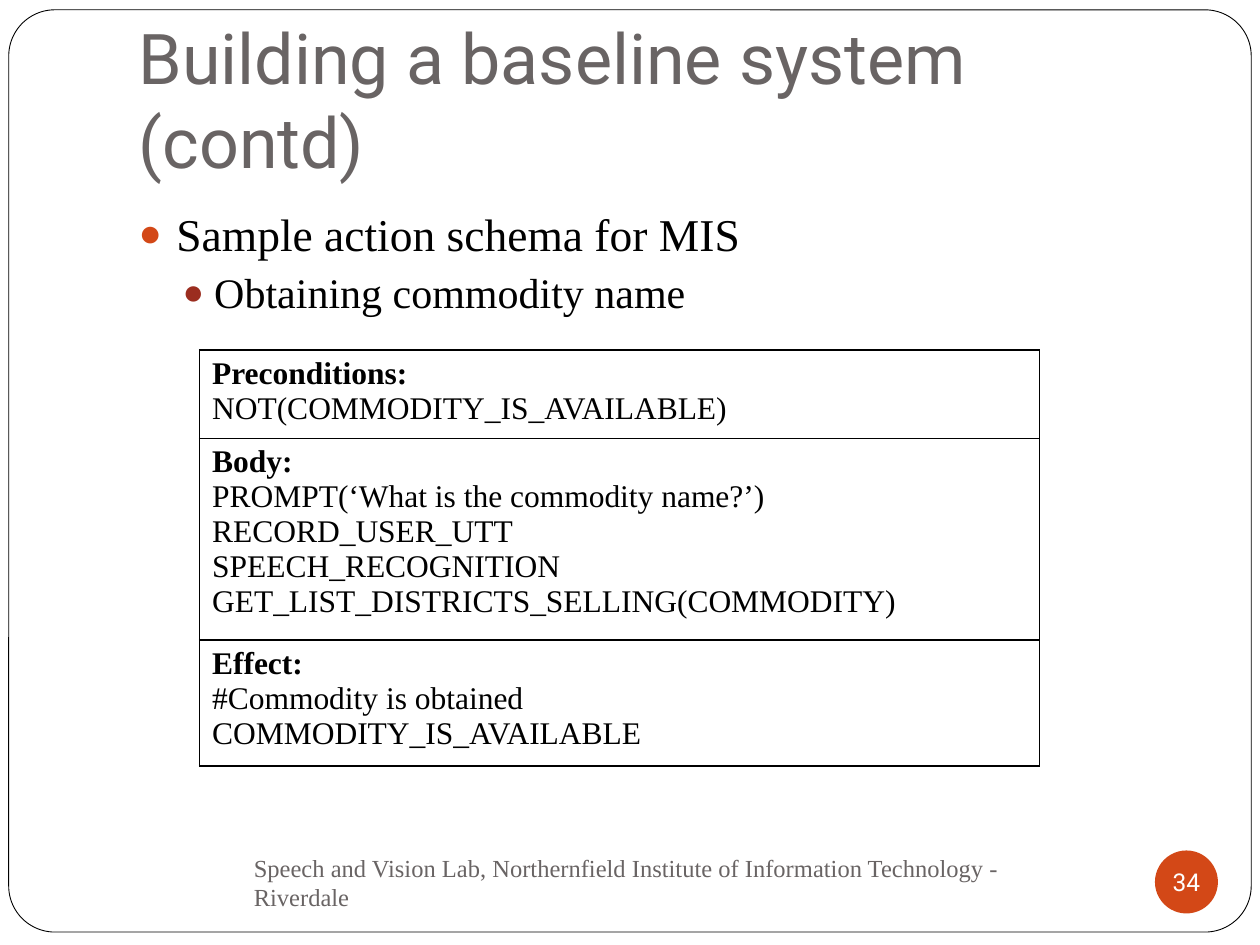
from dataclasses import dataclass

from lxml import etree
from pptx import Presentation
from pptx.dml.color import RGBColor
from pptx.enum import shapes as es, text as et
from pptx.oxml import ns
from pptx.util import Pt

SERIF, SANS = "Times New Roman", "Roboto"
BLACK, WHITE, GREY, RUST, BRICK = "000000", "FFFFFF", "696464", "D34817", "9B2D1F"


@dataclass
class Box:
    x: float
    y: float
    w: float
    h: float

    def lengths(self) -> tuple:
        return Pt(self.x), Pt(self.y), Pt(self.w), Pt(self.h)


@dataclass
class Point:
    words: str
    level: int
    size: float
    left: float
    hang: float
    before: float
    dot: str


@dataclass
class Part:
    head: str
    lines: list
    height: float


POINTS = [
    Point("Sample action schema for MIS", 0, 26, 21.6, 21.6, 5.8, RUST),
    Point("Obtaining commodity name", 1, 24, 43.2, 18, 3.7, BRICK),
]
PARTS = [
    Part("Preconditions:", ["NOT(COMMODITY_IS_AVAILABLE)"], 47.3),
    Part("Body:", ["PROMPT(‘What is the commodity name?’)", "RECORD_USER_UTT",
                   "SPEECH_RECOGNITION", "GET_LIST_DISTRICTS_SELLING(COMMODITY)"], 107),
    Part("Effect:", ["#Commodity is obtained", "COMMODITY_IS_AVAILABLE"], 67.3),
]


def paint(target, color: str) -> None:
    """Give a fill one solid colour."""
    target.solid()
    target.fore_color.rgb = RGBColor.from_string(color)


def assign(target, values: dict) -> None:
    for name, value in values.items():
        setattr(target, name, value)


def write(para, words: str, size: float, font: str, color: str, bold: bool = False) -> None:
    run = para.add_run()
    run.text = words
    assign(run.font, {"size": Pt(size), "name": font, "bold": bold})
    paint(run.font.fill, color)


def place(shape, box: Box) -> None:
    assign(shape, dict(zip(("left", "top", "width", "height"), box.lengths())))


def node(parent, tag: str, **attrs):
    return etree.SubElement(parent, ns.qn(tag), attrs)


def bullet(para, point: Point) -> None:
    props = para._p.get_or_add_pPr()
    props.set("marL", str(Pt(point.left)))
    props.set("indent", str(-Pt(point.hang)))
    node(node(props, "a:buClr"), "a:srgbClr", val=point.dot)
    node(props, "a:buSzPct", val="85000")
    node(props, "a:buChar", char="●")


def border(cell, color: str, width: float) -> None:
    props = cell._tc.get_or_add_tcPr()
    for side in "LRTB":
        line = node(props, f"a:ln{side}", w=str(Pt(width)))
        node(node(line, "a:solidFill"), "a:srgbClr", val=color)


def shape(slide, kind, box: Box, fill: str):
    item = slide.shapes.add_shape(kind, *box.lengths())
    item.shadow.inherit = False
    paint(item.fill, fill)
    return item


def main() -> None:
    deck = Presentation()
    assign(deck, {"slide_width": Pt(720), "slide_height": Pt(540)})
    slide = deck.slides.add_slide(deck.slide_layouts[1])

    # Rounded frame behind everything
    frame = shape(slide, es.MSO_SHAPE.ROUNDED_RECTANGLE, Box(5, 5.6, 710, 527), WHITE)
    frame.adjustments[0] = 0.05
    paint(frame.line.fill, BLACK)
    frame.line.width = Pt(0.5)
    frame.element.getparent().insert(2, frame.element)

    # Title
    title = slide.shapes.title
    place(title, Box(72, 21.6, 612, 90))
    assign(title.text_frame, {
        "vertical_anchor": et.MSO_ANCHOR.BOTTOM, "margin_bottom": Pt(7.2),
        "auto_size": et.MSO_AUTO_SIZE.NONE, "word_wrap": True})
    para = title.text_frame.paragraphs[0]
    para.alignment = et.PP_ALIGN.LEFT
    write(para, "Building a baseline system (contd)", 40, SANS, GREY)

    # Footer
    foot = slide.shapes.add_textbox(*Box(138, 486, 462, 36).lengths())
    assign(foot.text_frame, {"word_wrap": True, "vertical_anchor": et.MSO_ANCHOR.MIDDLE})
    write(foot.text_frame.paragraphs[0],
          "Speech and Vision Lab, Northernfield Institute of Information Technology - Riverdale",
          14, SERIF, GREY)

    # Page number
    badge = shape(slide, es.MSO_SHAPE.OVAL, Box(660, 486, 36, 36), RUST)
    badge.line.fill.background()
    assign(badge.text_frame, {
        "word_wrap": False, "vertical_anchor": et.MSO_ANCHOR.MIDDLE,
        **{f"margin_{side}": 0 for side in ("left", "top", "right", "bottom")}})
    para = badge.text_frame.paragraphs[0]
    para.alignment = et.PP_ALIGN.CENTER
    write(para, "34", 14, SANS, WHITE)

    # Bulleted list
    body = slide.placeholders[1]
    place(body, Box(72, 114, 612, 360))
    body.text_frame.auto_size = et.MSO_AUTO_SIZE.NONE
    for i, point in enumerate(POINTS):
        para = body.text_frame.add_paragraph() if i else body.text_frame.paragraphs[0]
        assign(para, {"level": point.level, "space_before": Pt(point.before)})
        bullet(para, point)
        write(para, point.words, point.size, SERIF, BLACK)

    # Action schema table
    high = sum(part.height for part in PARTS)
    table = slide.shapes.add_table(len(PARTS), 1, *Box(114, 200, 480, high).lengths()).table
    assign(table, {"first_row": False, "horz_banding": False})
    for row, part in zip(table.rows, PARTS):
        row.height = Pt(part.height)
        cell = row.cells[0]
        border(cell, BLACK, 1)
        paint(cell.fill, WHITE)
        write(cell.text_frame.paragraphs[0], part.head, 18, SERIF, BLACK, True)
        for line in part.lines:
            write(cell.text_frame.add_paragraph(), line, 18, SERIF, BLACK)

    deck.save("out.pptx")


if __name__ == "__main__":
    main()
